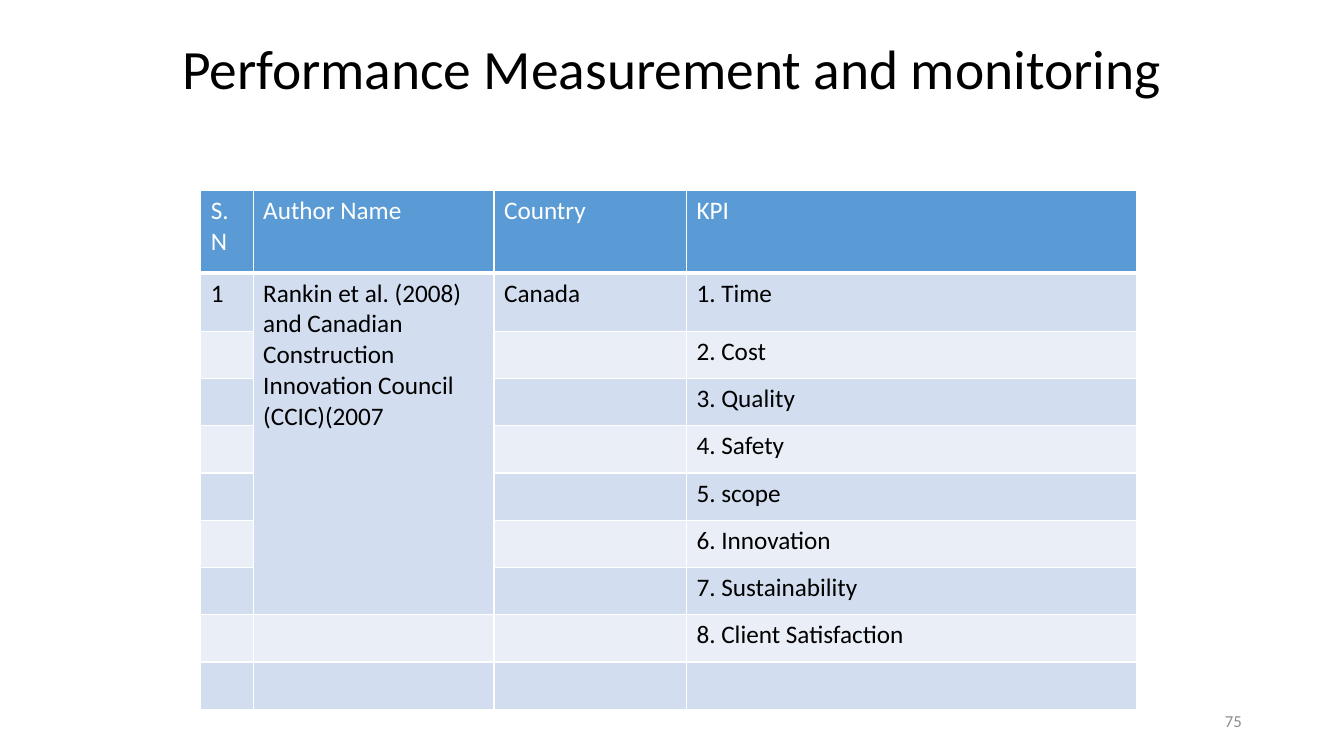
from lxml import etree
from pptx import Presentation
from pptx.dml.color import RGBColor
from pptx.enum.text import MSO_ANCHOR, PP_ALIGN
from pptx.oxml.ns import qn
from pptx.util import Cm, Pt

MIDDLE = MSO_ANCHOR.MIDDLE
CENTER, RIGHT = PP_ALIGN.CENTER, PP_ALIGN.RIGHT
TITLE_ONLY = 5

FONT = "Calibri"
BLACK, WHITE, GREY = "000000", "FFFFFF", "8C8C8C"
HEADER_FILL, BANDS = "5B9BD5", ("D2DEEF", "EAEFF7")

HEADERS = ["S.N", "Author Name", "Country", "KPI"]
KPIS = ["Time", "Cost", "Quality", "Safety", "scope", "Innovation",
        "Sustainability", "Client Satisfaction"]
AUTHOR = ("Rankin et al. (2008) and Canadian Construction "
          "Innovation Council (CCIC)(2007")
AUTHOR_ROWS = 7
COL_WIDTHS = [1.32, 6.07, 4.85, 11.35]
ROW_HEIGHTS = [2.08, 1.47] + [1.19] * 8


def rgb(value):
    return RGBColor.from_string(value)


def add_run(p, text, size, color):
    r = p.add_run()
    r.text = text
    r.font.size = Pt(size)
    r.font.name = FONT
    r.font.bold = False
    r.font.color.rgb = rgb(color)


def set_borders(cell, bottom=1):
    tc_pr = cell._tc.get_or_add_tcPr()
    for side, width in (("L", 1), ("R", 1), ("T", 1), ("B", bottom)):
        ln = etree.SubElement(tc_pr, qn(f"a:ln{side}"), w=str(Pt(width)))
        fill = etree.SubElement(ln, qn("a:solidFill"))
        etree.SubElement(fill, qn("a:srgbClr"), val=WHITE)


def add_title(s, left, top, width, height):
    sp = s.shapes.title
    sp.left, sp.top, sp.width, sp.height = left, top, width, height
    tf = sp.text_frame
    tf.vertical_anchor = MIDDLE
    p = tf.paragraphs[0]
    p.alignment = CENTER
    p.line_spacing = 0.9
    add_run(p, "Performance Measurement and monitoring", 39.6, BLACK)


def add_kpi_table(s, left, top):
    # Header, then one row per indicator and a blank closing row
    rows = [HEADERS] + [["", "", "", f"{n}. {kpi}"]
                        for n, kpi in enumerate(KPIS, 1)] + [[""] * 4]
    rows[1][:3] = ["1", AUTHOR, "Canada"]
    table = s.shapes.add_table(len(rows), len(HEADERS), left, top,
                               Cm(sum(COL_WIDTHS)),
                               Cm(sum(ROW_HEIGHTS))).table
    for column, width in zip(table.columns, COL_WIDTHS):
        column.width = Cm(width)
    for row, height in zip(table.rows, ROW_HEIGHTS):
        row.height = Cm(height)

    # Cell text, borders and banding
    for i, values in enumerate(rows):
        for j, text in enumerate(values):
            cell = table.cell(i, j)
            set_borders(cell, bottom=1 if i else 3)
            cell.fill.solid()
            cell.fill.fore_color.rgb = rgb(BANDS[(i - 1) % 2] if i
                                           else HEADER_FILL)
            if text:
                add_run(cell.text_frame.paragraphs[0], text, 18,
                        BLACK if i else WHITE)

    # The author spans several indicators
    table.cell(1, 1).merge(table.cell(AUTHOR_ROWS, 1))


def add_page_number(s, left, top, width, height):
    tf = s.shapes.add_textbox(left, top, width, height).text_frame
    tf.word_wrap = True
    tf.vertical_anchor = MIDDLE
    p = tf.paragraphs[0]
    p.alignment = RIGHT
    add_run(p, "75", 12, GREY)


def main():
    prs = Presentation()
    prs.slide_width, prs.slide_height = Cm(33.87), Cm(19.05)
    s = prs.slides.add_slide(prs.slide_layouts[TITLE_ONLY])
    add_title(s, Cm(4.23), Cm(0.64), Cm(25.4), Cm(2.34))
    add_kpi_table(s, Cm(5.06), Cm(4.8))
    add_page_number(s, Cm(23.93), Cm(17.65), Cm(7.62), Cm(1.02))
    prs.save("out.pptx")


if __name__ == "__main__":
    main()
